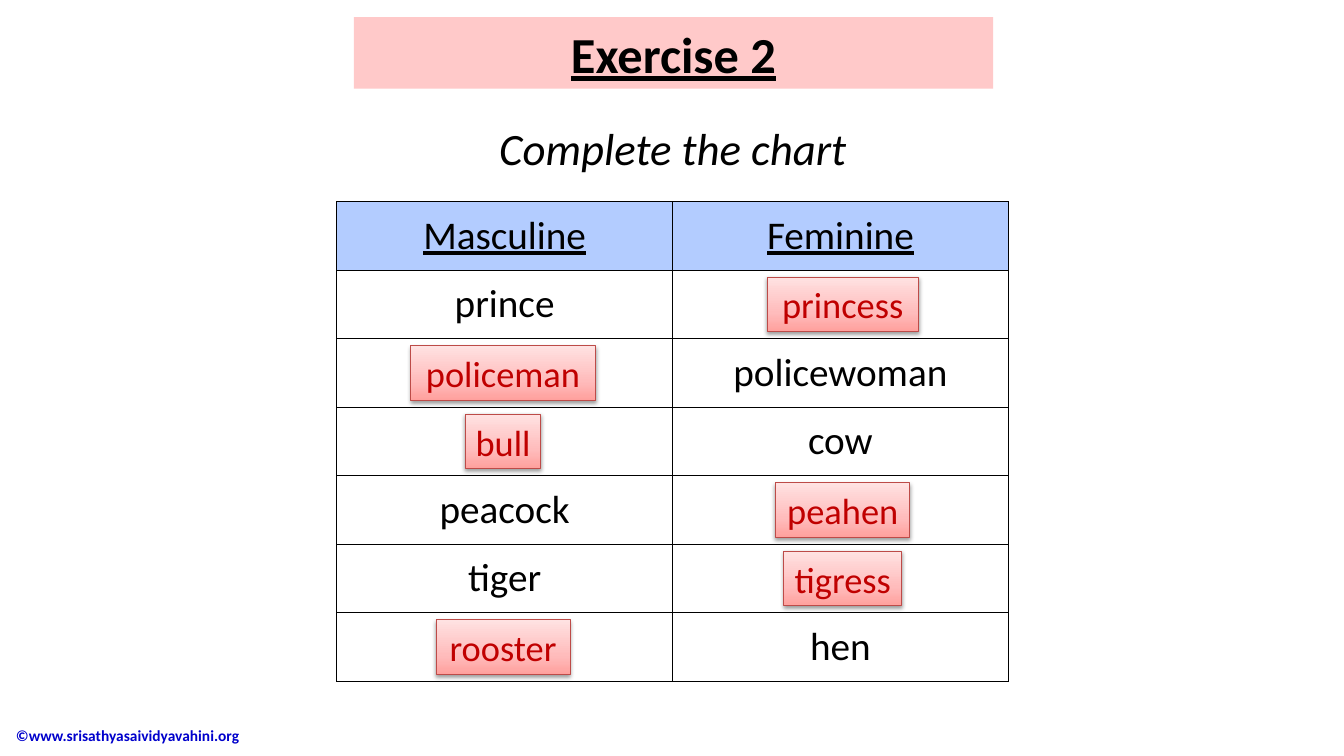
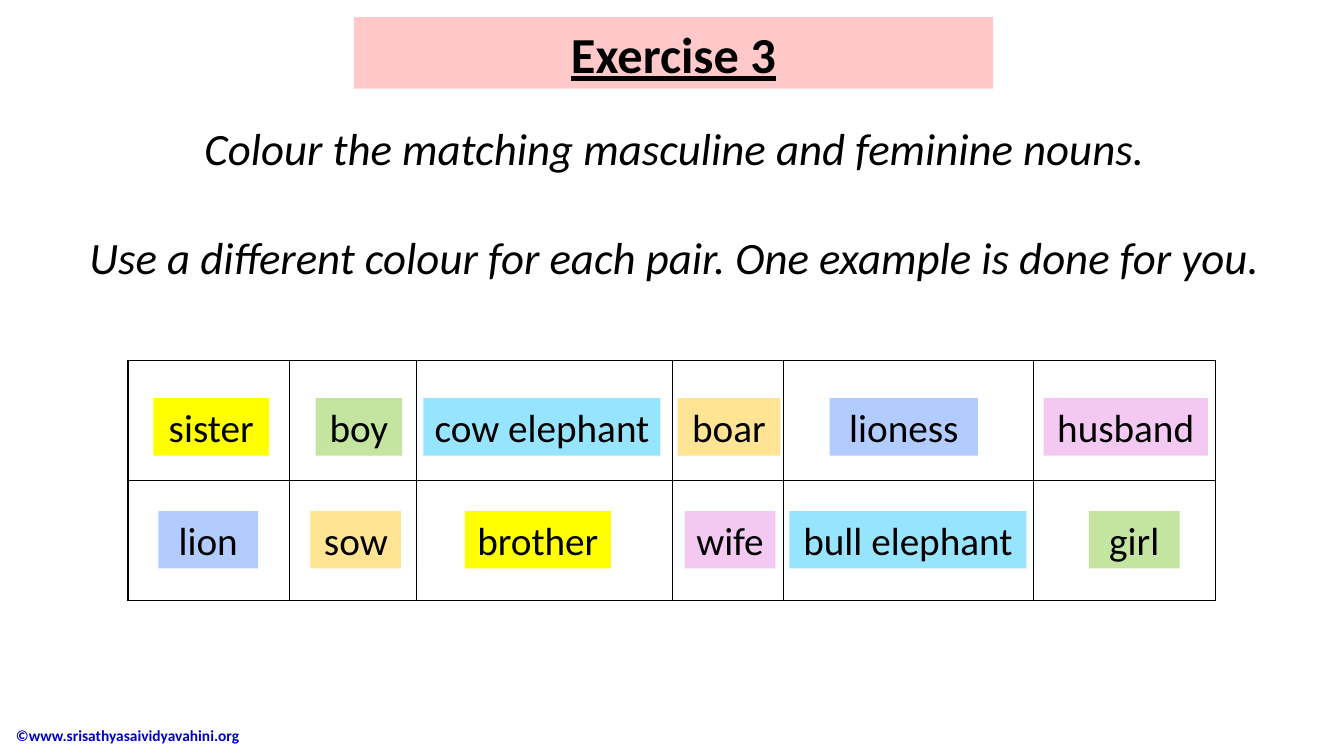
"""Build two grammar exercise slides about masculine and feminine nouns."""
from dataclasses import dataclass

from lxml import etree
from pptx import Presentation
from pptx.dml.color import RGBColor
from pptx.enum.shapes import MSO_SHAPE
from pptx.enum.text import MSO_ANCHOR, PP_ALIGN
from pptx.oxml import parse_xml
from pptx.oxml.ns import nsdecls, qn
from pptx.util import Inches, Pt

RECTANGLE = MSO_SHAPE.RECTANGLE
CENTER, LEFT = PP_ALIGN.CENTER, PP_ALIGN.LEFT
TOP, MIDDLE = MSO_ANCHOR.TOP, MSO_ANCHOR.MIDDLE

COLORS = {
    "black": "000000",
    "footer": "0000CC",
    "title_band": "FFC9C9",
    "answer_text": "C00000",
    "answer_line": "BD4B48",
    "blue": "B3CCFF",
    "green": "C4E59F",
    "yellow": "FFFF00",
    "cyan": "97E4FF",
    "pink": "F3C9F2",
    "orange": "FFE593",
}
FORMATS = {
    "title": {"size": Pt(36), "bold": True, "underline": True},
    "instruction": {"size": Pt(32), "italic": True},
    "heading": {"size": Pt(28), "underline": True},
    "word": {"size": Pt(28)},
    "answer": {"size": Pt(26)},
    "footer": {"size": Pt(11), "bold": True},
}
ANSWER_GRADIENT = ((0, "FFA09D"), (35, "FFBCBC"), (100, "FFE2E2"))

WORD_ROWS = (
    ("Masculine", "Feminine"),
    ("prince", ""),
    ("", "policewoman"),
    ("", "cow"),
    ("peacock", ""),
    ("tiger", ""),
    ("", "hen"),
)
CHART_TOP, CHART_ROW_HEIGHT = 2.0, 0.68
ANSWER_CENTERS = (4.99, 8.36)
ANSWER_HEIGHT = 0.54


@dataclass(frozen=True)
class Answer:
    text: str
    row: int
    column: int
    width: float


@dataclass(frozen=True)
class NounCard:
    text: str
    left: float
    width: float
    color: str


ANSWERS = (
    Answer("princess", 1, 1, 1.5),
    Answer("policeman", 2, 0, 1.83),
    Answer("bull", 3, 0, 0.75),
    Answer("peahen", 4, 1, 1.33),
    Answer("tigress", 5, 1, 1.17),
    Answer("rooster", 6, 0, 1.33),
)
CARD_ROWS = {
    3.95: (
        NounCard("sister", 1.52, 1.15, "yellow"),
        NounCard("boy", 3.13, 0.86, "green"),
        NounCard("cow elephant", 4.2, 2.35, "cyan"),
        NounCard("boar", 6.72, 1.02, "orange"),
        NounCard("lioness", 8.23, 1.47, "blue"),
        NounCard("husband", 10.35, 1.63, "pink"),
    ),
    5.07: (
        NounCard("lion", 1.57, 0.99, "blue"),
        NounCard("sow", 3.08, 0.9, "orange"),
        NounCard("brother", 4.61, 1.45, "yellow"),
        NounCard("wife", 6.79, 0.9, "pink"),
        NounCard("bull elephant", 7.83, 2.35, "cyan"),
        NounCard("girl", 10.8, 0.9, "green"),
    ),
}


def rgb(name: str) -> RGBColor:
    return RGBColor.from_string(COLORS[name])


def write_paragraph(paragraph, text: str, style: str, color: str = "black", align=CENTER) -> None:
    paragraph.alignment = align
    run = paragraph.add_run()
    run.text = text
    run.font.name = "Calibri"
    run.font.color.rgb = rgb(color)
    for attribute, value in FORMATS[style].items():
        setattr(run.font, attribute, value)


def add_text(slide, box: tuple, lines: tuple, style: str, color: str = "black", align=CENTER, anchor=TOP):
    shape = slide.shapes.add_textbox(*map(Inches, box))
    frame = shape.text_frame
    frame.word_wrap = True
    frame.vertical_anchor = anchor
    for index, line in enumerate(lines):
        paragraph = frame.add_paragraph() if index else frame.paragraphs[0]
        if index:
            paragraph.space_before = Pt(39)
        write_paragraph(paragraph, line, style, color, align)
    return shape


def add_exercise(presentation, layout, number: int):
    slide = presentation.slides.add_slide(layout)
    write_paragraph(slide.shapes.title.text_frame.paragraphs[0], f"Exercise {number}", "title")
    return slide


def style_layout(layout) -> None:
    title = layout.placeholders[0]
    title.left, title.top, title.width, title.height = map(Inches, (3.51, 0.17, 6.34, 0.71))
    title.fill.solid()
    title.fill.fore_color.rgb = rgb("title_band")


def add_label(slide, box: tuple, text: str, style: str, color: str):
    shape = slide.shapes.add_shape(RECTANGLE, *map(Inches, box))
    frame = shape.text_frame
    frame.word_wrap = False
    frame.vertical_anchor = MIDDLE
    write_paragraph(frame.paragraphs[0], text, style, color)
    return shape


def add_card(slide, card: NounCard, top: float) -> None:
    shape = add_label(slide, (card.left, top, card.width, 0.57), card.text, "word", "black")
    shape.shadow.inherit = False
    shape.fill.solid()
    shape.fill.fore_color.rgb = rgb(card.color)
    shape.line.fill.background()


def add_answer(slide, answer: Answer) -> None:
    left = ANSWER_CENTERS[answer.column] - answer.width / 2
    top = CHART_TOP + CHART_ROW_HEIGHT * answer.row + 0.07
    box = (left, top, answer.width, ANSWER_HEIGHT)
    shape = add_label(slide, box, answer.text, "answer", "answer_text")
    stops = "".join(
        f'<a:gs pos="{position * 1000}"><a:srgbClr val="{color}"/></a:gs>'
        for position, color in ANSWER_GRADIENT
    )
    properties = shape.element.spPr
    properties.append(parse_xml(
        f'<a:gradFill {nsdecls("a")}><a:gsLst>{stops}</a:gsLst>'
        '<a:lin ang="16200000" scaled="0"/></a:gradFill>'
    ))
    shape.line.color.rgb = rgb("answer_line")
    shape.line.width = Pt(0.75)
    properties.append(parse_xml(
        f'<a:effectLst {nsdecls("a")}><a:outerShdw blurRad="{Pt(3.1)}" dist="{Pt(1.6)}" '
        'dir="5400000" rotWithShape="0"><a:srgbClr val="000000"><a:alpha val="38000"/>'
        '</a:srgbClr></a:outerShdw></a:effectLst>'
    ))


def add_borders(cell) -> None:
    properties = cell._tc.get_or_add_tcPr()
    for side in ("a:lnL", "a:lnR", "a:lnT", "a:lnB"):
        line = etree.SubElement(properties, qn(side), w=str(Pt(1)))
        fill = etree.SubElement(line, qn("a:solidFill"))
        etree.SubElement(fill, qn("a:srgbClr"), val=COLORS["black"])


def add_grid(slide, left: float, top: float, widths: tuple, row_height: float, rows: int):
    box = (left, top, sum(widths), row_height * rows)
    table = slide.shapes.add_table(rows, len(widths), *map(Inches, box)).table
    table.first_row = table.horz_banding = False
    for column, width in zip(table.columns, widths):
        column.width = Inches(width)
    for row in table.rows:
        row.height = Inches(row_height)
    for cell in table.iter_cells():
        cell.vertical_anchor = MIDDLE
        add_borders(cell)
        cell.fill.background()
    return table


def build_chart_exercise(slide) -> None:
    add_text(slide, (1.94, 1.15, 9.47, 0.64), ("Complete the chart",), "instruction")
    table = add_grid(slide, 3.34, CHART_TOP, (3.33, 3.33), CHART_ROW_HEIGHT, len(WORD_ROWS))
    for row_index, words in enumerate(WORD_ROWS):
        for column_index, word in enumerate(words):
            cell = table.cell(row_index, column_index)
            if row_index == 0:
                cell.fill.solid()
                cell.fill.fore_color.rgb = rgb("blue")
            if word:
                style = "word" if row_index else "heading"
                write_paragraph(cell.text_frame.paragraphs[0], word, style)
    for answer in ANSWERS:
        add_answer(slide, answer)


def build_matching_exercise(slide) -> None:
    lines = (
        "Colour the matching masculine and feminine nouns.",
        "Use a different colour for each pair. One example is done for you.",
    )
    add_text(slide, (0.68, 1.15, 12.03, 1.72), lines, "instruction")
    add_grid(slide, 1.27, 3.58, (1.6, 1.26, 2.54, 1.1, 2.48, 1.81), 1.19, len(CARD_ROWS))
    for top, cards in CARD_ROWS.items():
        for card in cards:
            add_card(slide, card, top)


def main() -> None:
    presentation = Presentation()
    presentation.slide_width, presentation.slide_height = Inches(13.33), Inches(7.5)
    layout = presentation.slide_layouts[5]
    style_layout(layout)
    chart_slide = add_exercise(presentation, layout, 2)
    footer = add_text(
        chart_slide, (0.06, 7.1, 3.53, 0.4), ("©www.srisathyasaividyavahini.org",),
        "footer", "footer", LEFT, MIDDLE,
    )
    layout.shapes.element.append(footer.element)
    build_chart_exercise(chart_slide)
    build_matching_exercise(add_exercise(presentation, layout, 3))
    presentation.save("out.pptx")


if __name__ == "__main__":
    main()
